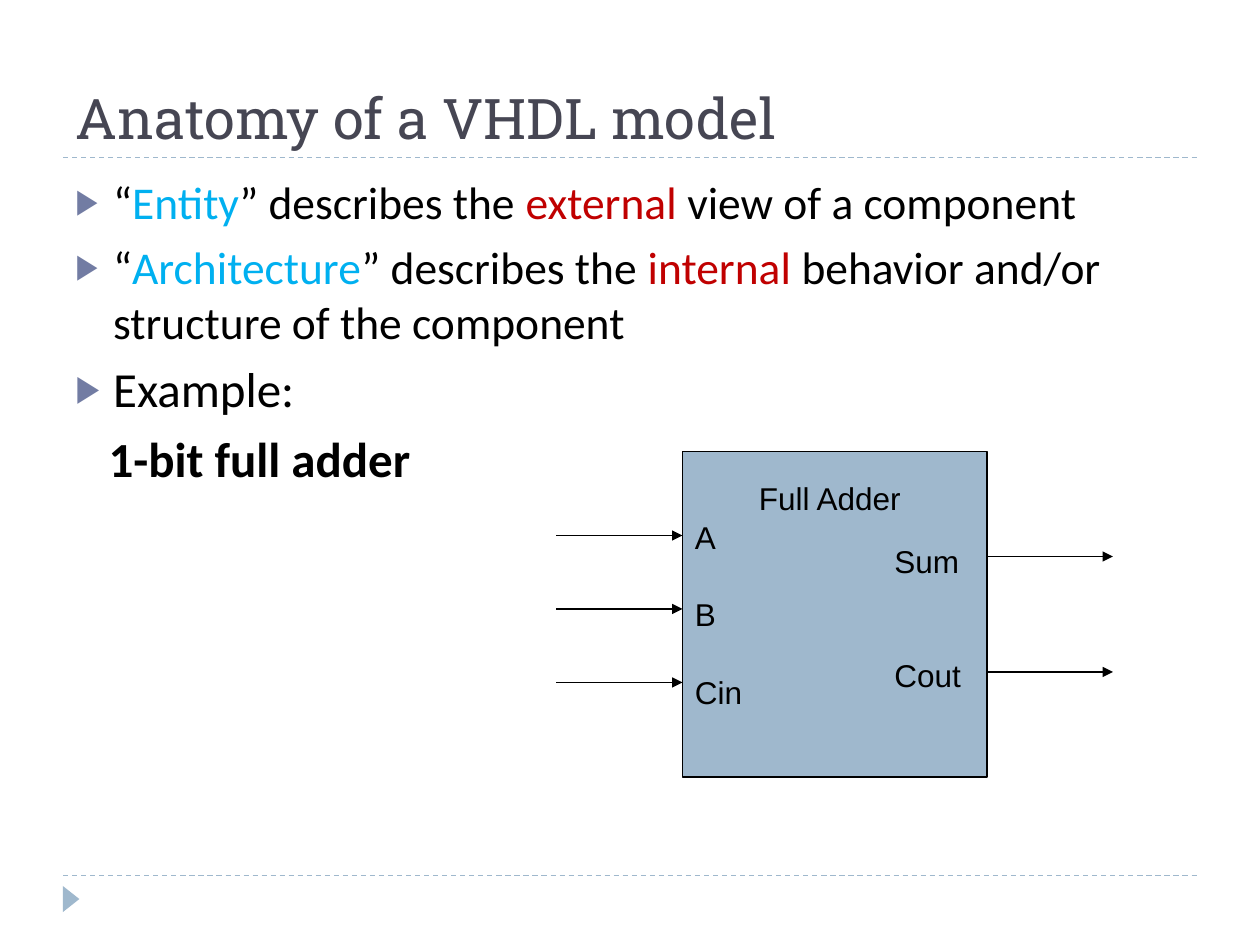
from lxml.etree import SubElement
from pptx import Presentation
from pptx.dml.color import RGBColor
from pptx.enum.dml import MSO_LINE
from pptx.enum.shapes import MSO_CONNECTOR, MSO_SHAPE
from pptx.enum.text import MSO_ANCHOR as Anchor, MSO_AUTO_SIZE as AutoSize, PP_ALIGN as Align
from pptx.oxml.ns import qn
from pptx.util import Pt

BLACK = RGBColor(0x00, 0x00, 0x00)
SLATE = RGBColor(0x46, 0x46, 0x53)
STEEL = RGBColor(0x9F, 0xB8, 0xCD)
INDIGO = RGBColor(0x72, 0x7C, 0xA3)
CYAN = RGBColor(0x00, 0xB0, 0xF0)
RED = RGBColor(0xC0, 0x00, 0x00)

POINTS = [
    (26, [("“", BLACK), ("Entity", CYAN), ("” describes the ", BLACK),
          ("external", RED), (" view of a component", BLACK)]),
    (26, [("“", BLACK), ("Architecture", CYAN), ("” describes the ", BLACK),
          ("internal", RED), (" behavior and/or structure of the component", BLACK)]),
    (28, [("Example:", BLACK)]),
]


def add_run(paragraph, text, font_name, size, color=BLACK, bold=False):
    run = paragraph.add_run()
    run.text = text
    font = run.font
    font.name, font.size, font.bold = font_name, Pt(size), bold
    font.color.rgb = color


def add_line(slide, x1, y1, x2, y2, color):
    line = slide.shapes.add_connector(
        MSO_CONNECTOR.STRAIGHT, Pt(x1), Pt(y1), Pt(x2), Pt(y2))
    line.line.color.rgb = color
    line.line.width = Pt(0.75)
    SubElement(line._element.spPr, qn("a:effectLst"))
    return line


def add_arrow(slide, x, y, length):
    arrow = add_line(slide, x, y, x + length, y, BLACK)
    SubElement(arrow.line._get_or_add_ln(), qn("a:tailEnd"), type="triangle")


def add_box(slide, left, top, width, height, wrap):
    box = slide.shapes.add_textbox(Pt(left), Pt(top), Pt(width), Pt(height))
    box.text_frame.word_wrap = wrap
    return box.text_frame


def next_paragraph(frame, index):
    return frame.add_paragraph() if index else frame.paragraphs[0]


def write_ports(frame, names, gap):
    for index, name in enumerate(names):
        paragraph = next_paragraph(frame, index)
        paragraph.alignment = Align.LEFT
        if index:
            paragraph.space_before = Pt(gap)
        add_run(paragraph, name, "Arial", 18)


def set_indent(paragraph, margin, indent):
    props = paragraph._p.get_or_add_pPr()
    props.set("marL", str(Pt(margin)))
    props.set("indent", str(Pt(indent)))
    return props


def add_bullet(paragraph):
    props = set_indent(paragraph, 21.6, -21.6)
    color = SubElement(props, qn("a:buClr"))
    SubElement(color, qn("a:srgbClr"), val=str(INDIGO))
    SubElement(props, qn("a:buSzPct"), val="76000")
    SubElement(props, qn("a:buFont"), typeface="Arial")
    SubElement(props, qn("a:buChar"), char="▶")


def draw_frame(slide, left, width, rule_tops):
    for top in rule_tops:
        rule = add_line(slide, left, top, left + width, top, STEEL)
        rule.line.dash_style = MSO_LINE.DASH
    marker = slide.shapes.add_shape(
        MSO_SHAPE.ISOSCELES_TRIANGLE, Pt(left - 2.9), Pt(509), Pt(15), Pt(9.5))
    marker.rotation = 90
    marker.shadow.inherit = False
    marker.fill.solid()
    marker.fill.fore_color.rgb = STEEL
    marker.line.fill.background()


def place_title(slide, left, top, width, height):
    title = slide.shapes.title
    title.left, title.top, title.width, title.height = map(Pt, (left, top, width, height))
    frame = title.text_frame
    frame.auto_size = AutoSize.NONE
    frame.vertical_anchor = Anchor.BOTTOM
    heading = frame.paragraphs[0]
    heading.alignment = Align.LEFT
    add_run(heading, "Anatomy of a VHDL model", "Roboto Slab", 32, SLATE)


def write_points(slide, left, top, width, height):
    frame = add_box(slide, left, top, width, height, True)
    for index, (size, pieces) in enumerate(POINTS):
        point = next_paragraph(frame, index)
        point.space_before = Pt(6)
        add_bullet(point)
        for text, color in pieces:
            add_run(point, text, "Calibri", size, color)
    example = frame.add_paragraph()
    example.space_before = Pt(6)
    set_indent(example, 19, 0)
    add_run(example, "1-bit full adder", "Calibri", 28, bold=True)


def draw_adder(slide, left, top, width, height):
    block = slide.shapes.add_shape(
        MSO_SHAPE.RECTANGLE, Pt(left), Pt(top), Pt(width), Pt(height))
    block.shadow.inherit = False
    block.fill.solid()
    block.fill.fore_color.rgb = STEEL
    block.line.color.rgb = BLACK
    block.line.width = Pt(0.75)
    block.text_frame.vertical_anchor = Anchor.MIDDLE
    write_ports(block.text_frame, ["A", "B", "Cin"], 22.5)

    for row in range(3):
        add_arrow(slide, left - 72, top + 48 + 42 * row, 72)
    for offset in (60, 126):
        add_arrow(slide, left + width, top + offset, 72)

    outputs = add_box(slide, left + 114, top + 48, 52.5, 93.6, False)
    write_ports(outputs, ["Sum", "Cout"], 44)
    name = add_box(slide, left + 36, top + 12, 96.5, 29, False).paragraphs[0]
    name.alignment = Align.CENTER
    add_run(name, "Full Adder", "Arial", 18)


def main():
    deck = Presentation()
    deck.slide_width, deck.slide_height = Pt(720), Pt(540)
    slide = deck.slides.add_slide(deck.slide_layouts[5])
    draw_frame(slide, 36, 648, (500.4, 90))
    place_title(slide, 36, 12, 648, 78)
    write_points(slide, 36, 96, 648, 389)
    draw_adder(slide, 390, 258, 174, 186)
    deck.save("out.pptx")


if __name__ == "__main__":
    main()
